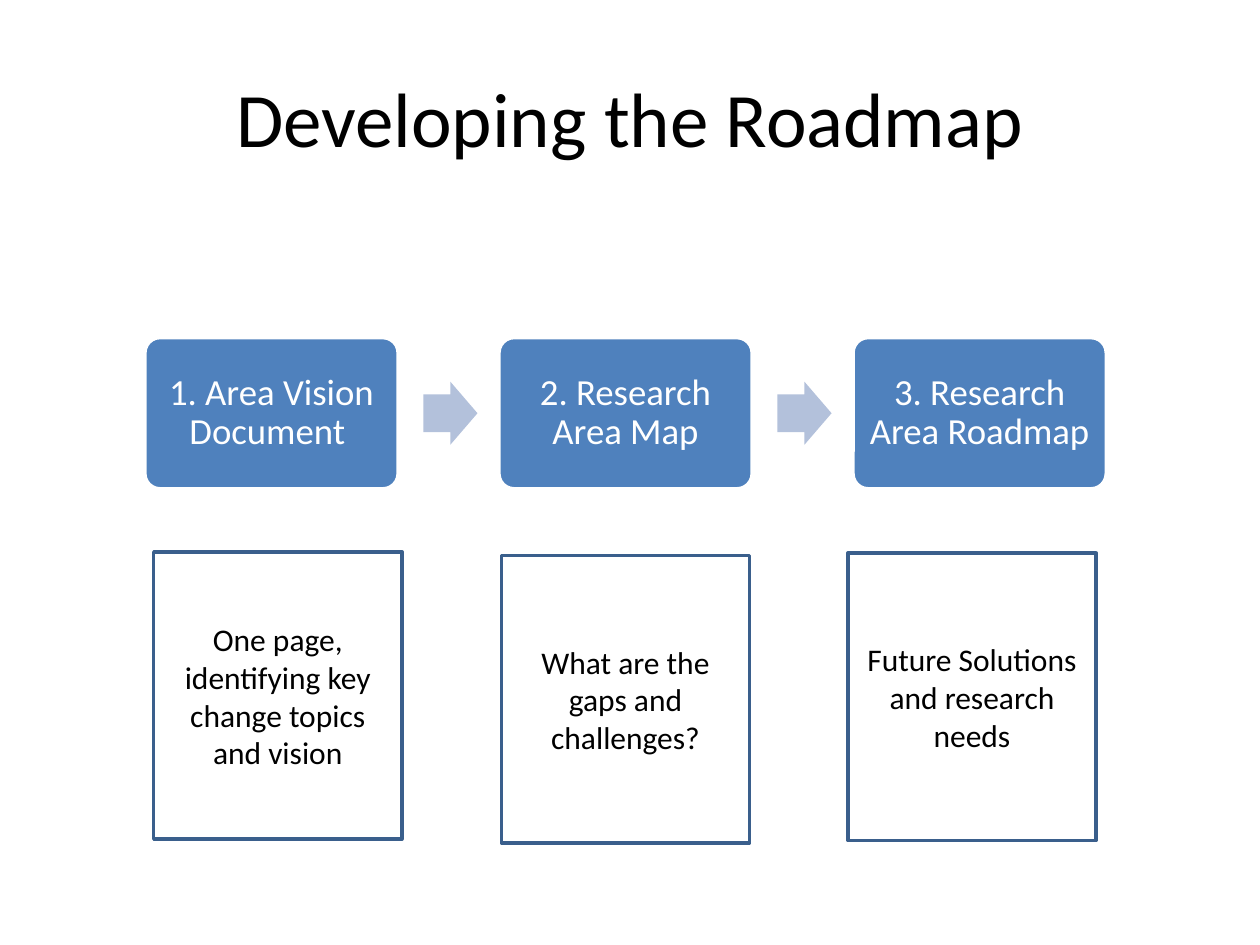
from pptx import Presentation
from pptx.dml.color import RGBColor
from pptx.enum.shapes import MSO_SHAPE
from pptx.enum.text import MSO_ANCHOR, PP_ALIGN
from pptx.util import Inches, Pt

# Content: step name, note, note left, note top
TITLE = "Developing the Roadmap"
STEPS = [
    ("1. Area Vision Document ",
     "One page, identifying key change topics and vision", 1.22, 4.38),
    ("2. Research Area Map",
     "What are the gaps and challenges?", 3.98, 4.41),
    ("3. Research Area Roadmap",
     "Future Solutions and research needs", 6.73, 4.39),
]

THEME = {
    "font": "Calibri",
    "step": "4F81BD", "arrow": "B3C1DB", "edge": "3A5F8C",
    "dark": "000000", "light": "FFFFFF",
    "title_size": 44, "step_size": 21, "note_size": 18,
}

# Layout in inches
LEFT, TOP, PITCH = 1.15, 2.68, 2.81
STEP_W, STEP_H = 2.01, 1.2
ARROW_W, ARROW_H, ARROW_GAP = 0.43, 0.5, 0.2
NOTE_W, NOTE_H = 1.97, 2.28


def color(name):
    return RGBColor.from_string(THEME[name])


def write(shape, text, size, ink):
    frame = shape.text_frame
    frame.word_wrap = True
    frame.vertical_anchor = MSO_ANCHOR.MIDDLE
    para = frame.paragraphs[0]
    para.text = text
    para.alignment = PP_ALIGN.CENTER
    para.font.name = THEME["font"]
    para.font.size = Pt(THEME[size])
    para.font.color.rgb = color(ink)
    return frame


def add_box(slide, kind, box, fill=None, line=None):
    shape = slide.shapes.add_shape(kind, *map(Inches, box))
    shape.shadow.inherit = False
    if fill:
        shape.fill.solid()
        shape.fill.fore_color.rgb = color(fill)
    else:
        shape.fill.background()
    if line:
        shape.line.color.rgb = color(line)
        shape.line.width = Pt(2)
    else:
        shape.line.fill.background()
    return shape


def add_step(slide, left, text):
    step = add_box(slide, MSO_SHAPE.ROUNDED_RECTANGLE,
                   (left, TOP, STEP_W, STEP_H), "step", "light")
    step.adjustments[0] = 0.1
    frame = write(step, text, "step_size", "light")
    frame.margin_left = frame.margin_right = Inches(0.09)
    frame.margin_top = frame.margin_bottom = Inches(0.09)
    frame.paragraphs[0].line_spacing = 0.9


def add_arrow(slide, left):
    top = TOP + (STEP_H - ARROW_H) / 2
    arrow = add_box(slide, MSO_SHAPE.RIGHT_ARROW,
                    (left, top, ARROW_W, ARROW_H), "arrow")
    arrow.adjustments[0] = 0.6
    arrow.adjustments[1] = 0.5


def main():
    deck = Presentation()
    deck.slide_width, deck.slide_height = Inches(10), Inches(7.5)
    slide = deck.slides.add_slide(deck.slide_layouts[5])

    # Title
    title = slide.shapes.title
    title.left, title.top = Inches(0.5), Inches(0.3)
    title.width, title.height = Inches(9), Inches(1.25)
    write(title, TITLE, "title_size", "dark")

    # Process row
    for i, (name, *_) in enumerate(STEPS):
        left = LEFT + i * PITCH
        add_step(slide, left, name)
        if i < len(STEPS) - 1:
            add_arrow(slide, left + STEP_W + ARROW_GAP)

    # Notes below the steps
    for _, text, left, top in STEPS:
        note = add_box(slide, MSO_SHAPE.RECTANGLE,
                       (left, top, NOTE_W, NOTE_H), line="edge")
        write(note, text, "note_size", "dark")

    deck.save("out.pptx")


if __name__ == "__main__":
    main()
